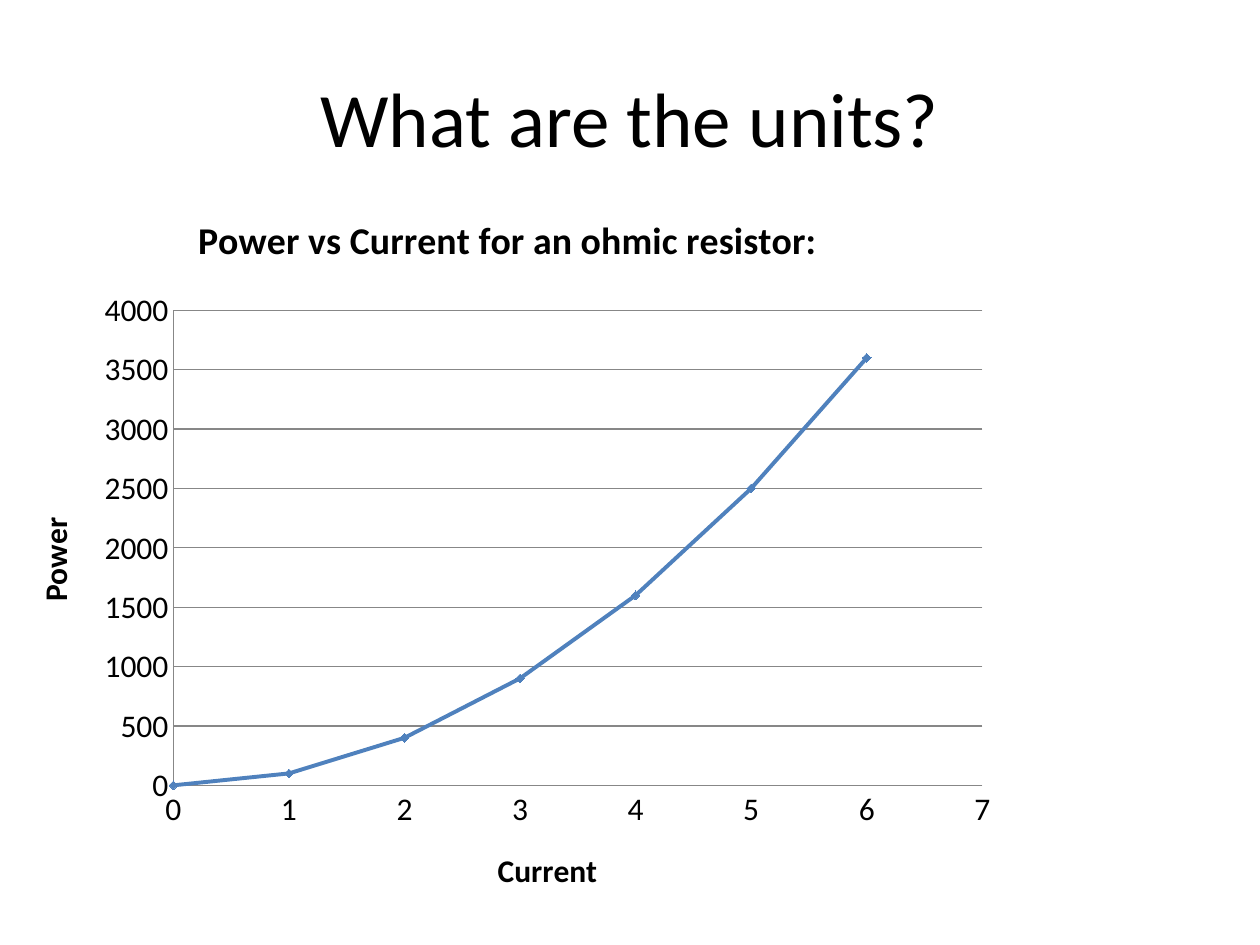
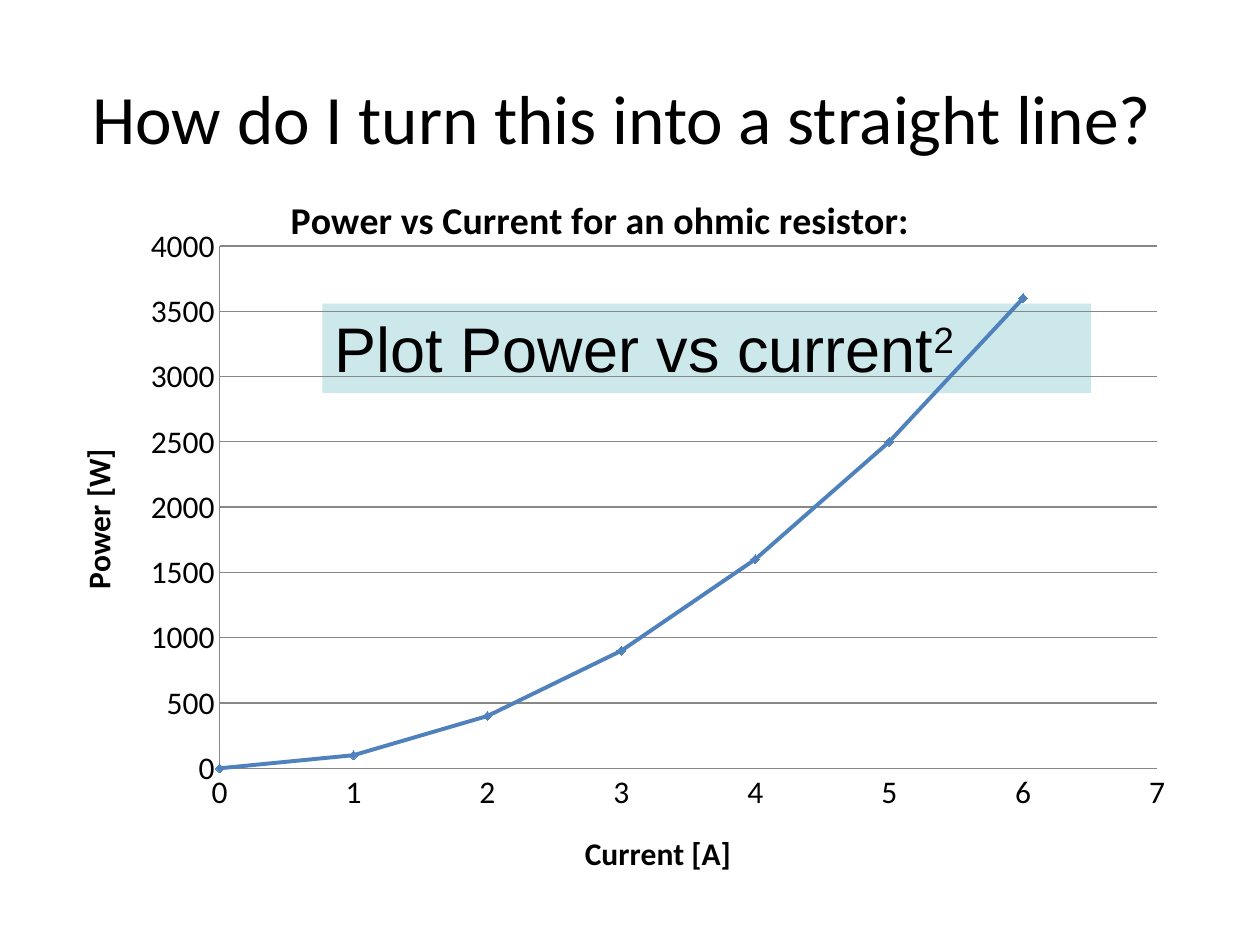
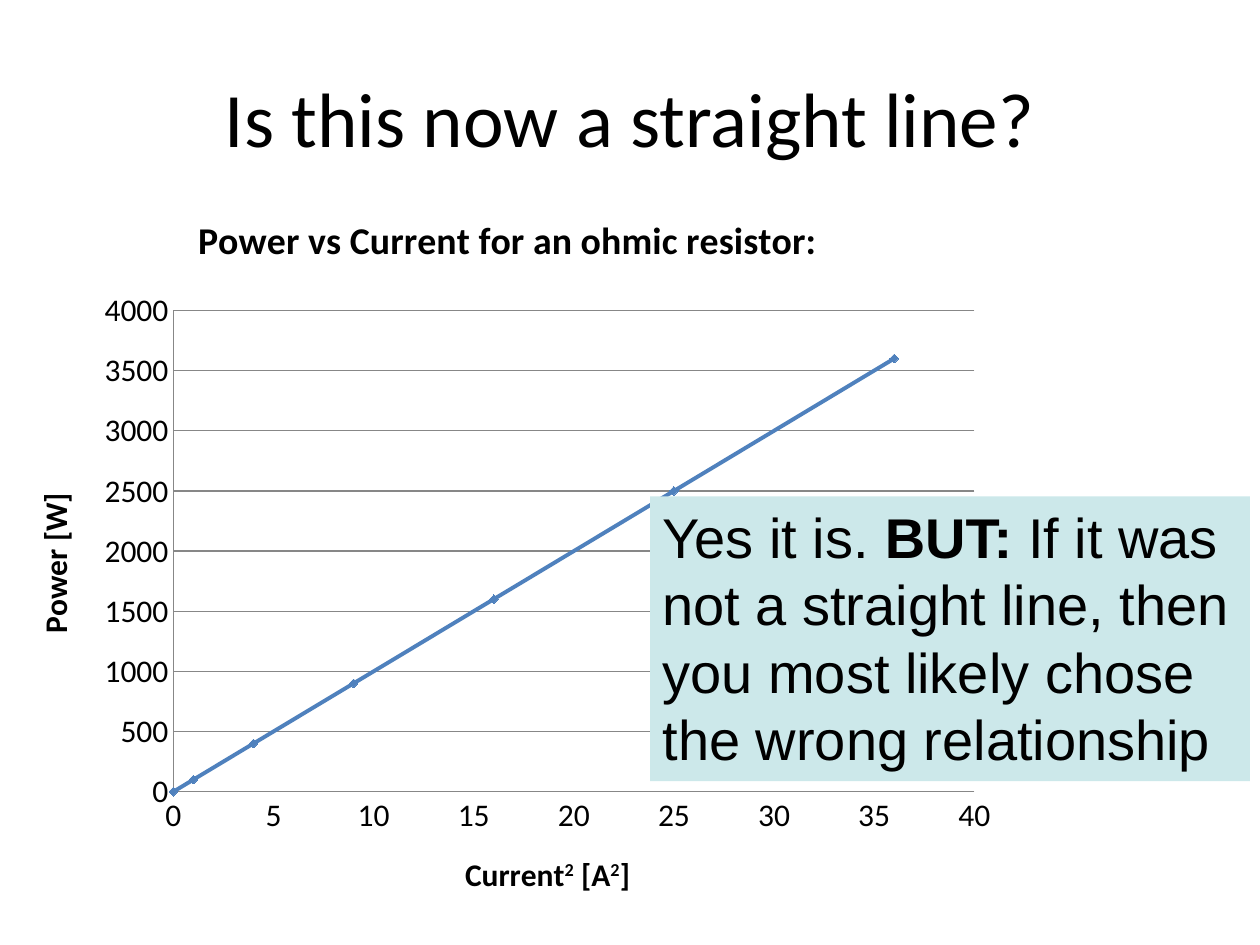
from lxml import etree
from pptx import Presentation
from pptx.chart.data import XyChartData
from pptx.dml.color import RGBColor
from pptx.enum.chart import XL_CHART_TYPE, XL_MARKER_STYLE, XL_TICK_MARK
from pptx.enum.shapes import MSO_SHAPE
from pptx.enum.text import MSO_ANCHOR, PP_ALIGN
from pptx.oxml.ns import qn
from pptx.util import Inches, Pt

BLACK = RGBColor(0x00, 0x00, 0x00)
CURVE_BLUE = RGBColor(0x4F, 0x81, 0xBD)
GRID_GRAY = RGBColor(0x87, 0x87, 0x87)
ANSWER_TEAL = RGBColor(0xCC, 0xE8, 0xEA)

TITLE_BOX = (0.5, 0.3, 9, 1.25)
SIDE_CHART_BOX = (0.04, 1.47, 7.98, 5.84)
WIDE_CHART_BOX = (0.2, 1.31, 9.13, 5.84)
WIDE_PLOT = {"x": 0.169, "y": 0.11, "w": 0.815, "h": 0.71}

CHART_TITLE = "Power vs Current for an ohmic resistor:"
CURRENTS = range(7)
SQUARED_CURRENTS = [current ** 2 for current in CURRENTS]
POWERS = [100 * square for square in SQUARED_CURRENTS]


def set_font(font, name, size, bold=None):
    font.name = name
    font.size = Pt(size)
    font.bold = bold
    font.color.rgb = BLACK


def add_runs(paragraph, runs):
    """Add (text, style) runs; style is "", "bold" or "superscript"."""
    for text, style in runs:
        run = paragraph.add_run()
        run.text = text
        if style == "bold":
            run.font.bold = True
        elif style == "superscript":
            run._r.get_or_add_rPr().set("baseline", "30000")


def add_title(slide, text, size=44):
    shape = slide.shapes.add_textbox(*map(Inches, TITLE_BOX))
    frame = shape.text_frame
    frame.word_wrap = True
    frame.vertical_anchor = MSO_ANCHOR.MIDDLE
    paragraph = frame.paragraphs[0]
    paragraph.text = text
    paragraph.alignment = PP_ALIGN.CENTER
    set_font(paragraph.font, "Calibri", size)


def add_answer(slide, box, runs, size):
    shape = slide.shapes.add_shape(MSO_SHAPE.RECTANGLE, *map(Inches, box))
    shape.shadow.inherit = False
    shape.fill.solid()
    shape.fill.fore_color.rgb = ANSWER_TEAL
    shape.line.fill.background()
    frame = shape.text_frame
    frame.word_wrap = True
    frame.vertical_anchor = MSO_ANCHOR.TOP
    paragraph = frame.paragraphs[0]
    paragraph.alignment = PP_ALIGN.LEFT
    set_font(paragraph.font, "Arial", size)
    add_runs(paragraph, runs)


def style_axis(axis, title_runs, maximum, unit):
    axis.minimum_scale = 0
    axis.maximum_scale = maximum
    axis.major_unit = unit
    axis.major_tick_mark = axis.minor_tick_mark = XL_TICK_MARK.NONE
    axis.format.line.color.rgb = GRID_GRAY
    axis.format.line.width = Pt(0.75)
    paragraph = axis.axis_title.text_frame.paragraphs[0]
    set_font(paragraph.font, "Calibri", 18, bold=True)
    add_runs(paragraph, title_runs)


def fix_plot_area(chart, fractions):
    """Place the inner plot area by fractions of the chart's size."""
    plot_area = chart._chartSpace.find(".//" + qn("c:plotArea"))
    for layout in plot_area.findall(qn("c:layout")):
        plot_area.remove(layout)
    layout = etree.Element(qn("c:layout"))
    plot_area.insert(0, layout)
    manual = etree.SubElement(layout, qn("c:manualLayout"))
    settings = {"layoutTarget": "inner", "xMode": "edge", "yMode": "edge", **fractions}
    for tag, value in settings.items():
        etree.SubElement(manual, qn("c:" + tag)).set("val", str(value))


def add_power_chart(slide, box, currents, current_runs, power_title,
                    current_scale=(7, 1), plot=None):
    data = XyChartData()
    points = data.add_series("Series 1")
    for current, power in zip(currents, POWERS):
        points.add_data_point(current, power)
    chart = slide.shapes.add_chart(
        XL_CHART_TYPE.XY_SCATTER_LINES, *map(Inches, box), data).chart
    set_font(chart.font, "Calibri", 18)
    chart.has_legend = False
    chart.has_title = True
    heading = chart.chart_title.text_frame.paragraphs[0]
    heading.text = CHART_TITLE
    set_font(heading.font, "Calibri", 21.6, bold=True)

    style_axis(chart.category_axis, current_runs, *current_scale)
    style_axis(chart.value_axis, [(power_title, "")], 4000, 500)
    chart.category_axis.has_major_gridlines = False
    gridline = chart.value_axis.major_gridlines.format.line
    gridline.color.rgb = GRID_GRAY
    gridline.width = Pt(0.75)

    chart.plots[0].vary_by_categories = False
    series = chart.plots[0].series[0]
    series.smooth = False
    series.format.line.color.rgb = CURVE_BLUE
    series.format.line.width = Pt(2.25)
    series.marker.style = XL_MARKER_STYLE.DIAMOND
    series.marker.size = 5
    series.marker.format.fill.solid()
    series.marker.format.fill.fore_color.rgb = CURVE_BLUE
    series.marker.format.line.color.rgb = CURVE_BLUE
    if plot:
        fix_plot_area(chart, plot)


def build_units_slide(slide):
    add_title(slide, "What are the units?")
    add_power_chart(slide, SIDE_CHART_BOX, CURRENTS, [("Current", "")], "Power")


def build_question_slide(slide):
    add_title(slide, "How do I turn this into a straight line? ", 39.6)
    add_answer(slide, (2.56, 2.41, 6.1, 0.71),
               [("Plot Power vs current", ""), ("2", "superscript")], 36)
    add_power_chart(slide, WIDE_CHART_BOX, CURRENTS, [("Current [A]", "")],
                    "Power [W]", plot=WIDE_PLOT)


def build_straight_line_slide(slide):
    add_title(slide, "Is this now a straight line?")
    add_power_chart(slide, SIDE_CHART_BOX, SQUARED_CURRENTS,
                    [("Current", ""), ("2", "superscript"), (" [A", ""),
                     ("2", "superscript"), ("]", "")],
                    "Power [W]", current_scale=(40, 5))
    add_answer(slide, (5.16, 3.94, 4.76, 2.26),
               [("Yes it is. ", ""), ("BUT: ", "bold"),
                ("If it was not a straight line, then you most likely chose "
                 "the wrong relationship", "")], 32)


def main():
    presentation = Presentation()
    presentation.slide_width = Inches(10)
    presentation.slide_height = Inches(7.5)
    blank = presentation.slide_layouts[6]
    for build in (build_units_slide, build_question_slide, build_straight_line_slide):
        build(presentation.slides.add_slide(blank))
    presentation.save("out.pptx")


if __name__ == "__main__":
    main()
